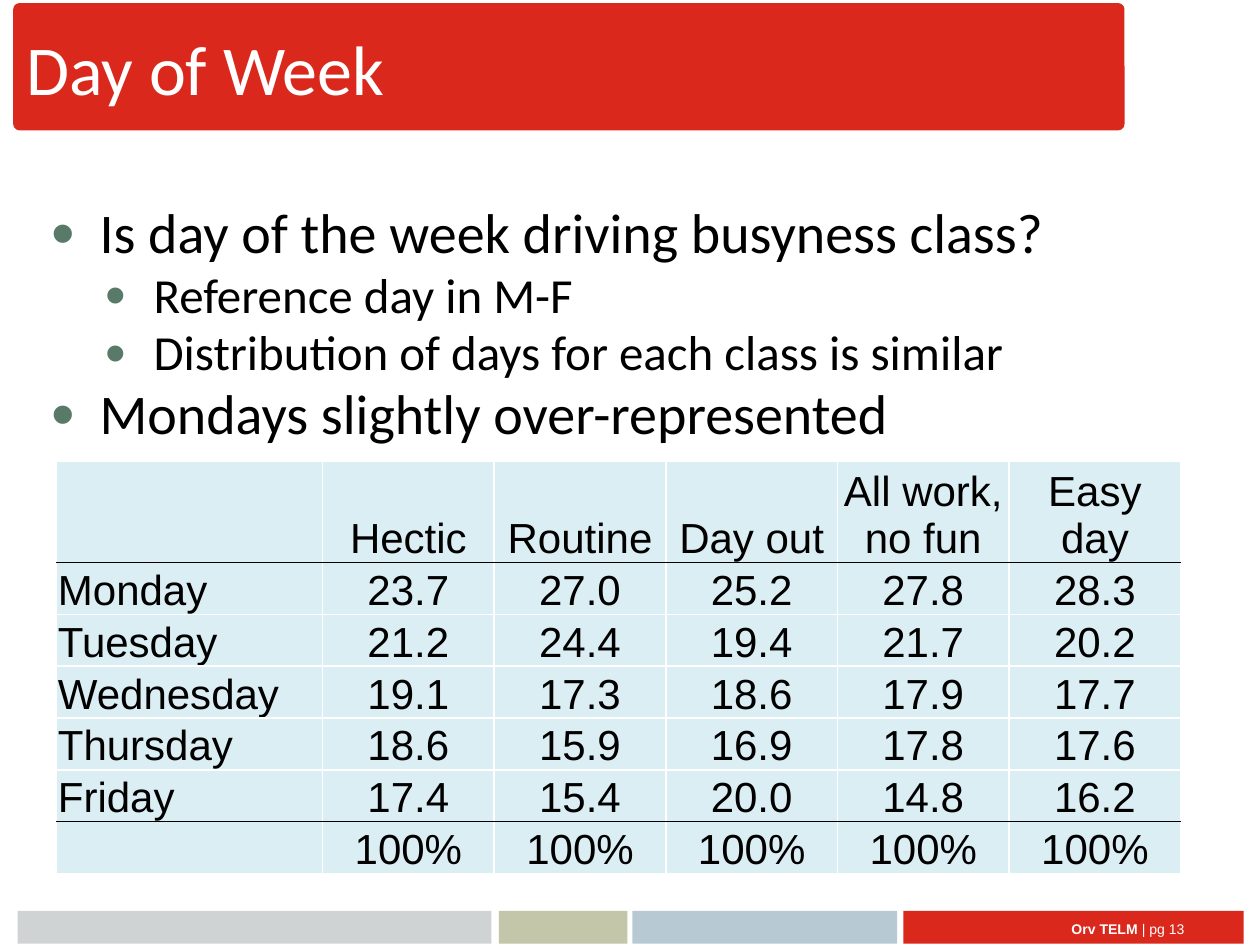
from dataclasses import dataclass

from lxml import etree
from pptx import Presentation
from pptx.dml.color import RGBColor
from pptx.enum.shapes import MSO_SHAPE
from pptx.enum.text import MSO_ANCHOR, MSO_AUTO_SIZE, PP_ALIGN
from pptx.oxml.ns import qn
from pptx.util import Pt

ROUNDED = MSO_SHAPE.ROUNDED_RECTANGLE
MIDDLE, BOTTOM = MSO_ANCHOR.MIDDLE, MSO_ANCHOR.BOTTOM
LEFT, CENTER, RIGHT = PP_ALIGN.LEFT, PP_ALIGN.CENTER, PP_ALIGN.RIGHT
NO_AUTOFIT = MSO_AUTO_SIZE.NONE


@dataclass(frozen=True)
class Theme:
    red: str = "DA291C"
    gray: str = "D0D3D4"
    olive: str = "C3C6A8"
    blue: str = "B7C9D3"
    bullet: str = "597A69"
    cell: str = "DBEEF4"
    black: str = "000000"
    white: str = "FFFFFF"
    heading_font: str = "Calibri"
    data_font: str = "Arial"
    title_size: float = 40
    list_sizes: tuple = (32, 28)
    list_indents: tuple = (27.36, 58.32)
    table_size: float = 24
    footer_size: float = 8


class SlideBuilder:
    def __init__(self, slide, theme):
        self.slide = slide
        self.theme = theme

    def format_runs(self, paragraph, font, size, color):
        for run in paragraph.runs:
            run.font.name = font
            run.font.size = Pt(size)
            run.font.color.rgb = RGBColor.from_string(color)

    def place(self, shape, box):
        shape.left, shape.top, shape.width, shape.height = map(Pt, box)

    def bring_to_front(self, shape):
        self.slide.shapes._spTree.append(shape._element)

    def bar(self, box, color, radius=0, outlined=False):
        shape = self.slide.shapes.add_shape(ROUNDED, *map(Pt, box))
        shape.shadow.inherit = False
        shape.adjustments[0] = radius
        shape.fill.solid()
        shape.fill.fore_color.rgb = RGBColor.from_string(color)
        if outlined:
            shape.line.color.rgb = RGBColor.from_string(color)
            shape.line.width = Pt(0.75)
        else:
            shape.line.fill.background()

    def title(self, text, box):
        shape = self.slide.shapes.title
        self.place(shape, box)
        self.bring_to_front(shape)
        frame = shape.text_frame
        frame.text = text
        frame.vertical_anchor = MIDDLE
        frame.auto_size = NO_AUTOFIT
        paragraph = frame.paragraphs[0]
        paragraph.alignment = LEFT
        self.format_runs(paragraph, self.theme.heading_font, self.theme.title_size, self.theme.white)

    def add_bullet(self, paragraph, indent):
        properties = paragraph._p.get_or_add_pPr()
        properties.set("marL", str(Pt(indent)))
        properties.set("indent", str(-Pt(self.theme.list_indents[0])))
        color = etree.SubElement(properties, qn("a:buClr"))
        etree.SubElement(color, qn("a:srgbClr"), val=self.theme.bullet)
        etree.SubElement(properties, qn("a:buSzPct"), val="120000")
        etree.SubElement(properties, qn("a:buFont"), typeface=self.theme.data_font)
        etree.SubElement(properties, qn("a:buChar"), char="•")

    def bullets(self, items, box, top_inset):
        shape = self.slide.placeholders[1]
        self.place(shape, box)
        self.bring_to_front(shape)
        frame = shape.text_frame
        frame.text = "\n".join(text for level, text in items)
        frame.auto_size = NO_AUTOFIT
        frame.margin_top = Pt(top_inset)
        for paragraph, (level, text) in zip(frame.paragraphs, items):
            paragraph.level = level
            paragraph.space_before = Pt(0)
            paragraph.line_spacing = 0.98
            self.add_bullet(paragraph, self.theme.list_indents[level])
            self.format_runs(paragraph, self.theme.heading_font, self.theme.list_sizes[level], self.theme.black)

    def footer(self, name, page, box):
        shape = self.slide.shapes.add_textbox(*map(Pt, box))
        frame = shape.text_frame
        frame.word_wrap = True
        frame.vertical_anchor = MIDDLE
        paragraph = frame.paragraphs[0]
        paragraph.alignment = RIGHT
        for text, bold in ((name, True), (page, False)):
            run = paragraph.add_run()
            run.text = text
            run.font.bold = bold
        self.format_runs(paragraph, self.theme.data_font, self.theme.footer_size, self.theme.white)

    def cell_borders(self, cell, colors):
        properties = cell._tc.get_or_add_tcPr()
        for side, color in colors.items():
            line = etree.SubElement(properties, qn(f"a:ln{side}"), w=str(Pt(1)))
            fill = etree.SubElement(line, qn("a:solidFill"))
            etree.SubElement(fill, qn("a:srgbClr"), val=color)

    def table(self, rows, left, top, column_widths, row_heights, ruled_rows):
        theme = self.theme
        box = (left, top, sum(column_widths), sum(row_heights))
        table = self.slide.shapes.add_table(len(rows), len(rows[0]), *map(Pt, box)).table
        table.first_row = table.horz_banding = False
        for column, width in zip(table.columns, column_widths):
            column.width = Pt(width)
        for row, height in zip(table.rows, row_heights):
            row.height = Pt(height)
        for row_index, values in enumerate(rows):
            above = theme.black if row_index - 1 in ruled_rows else theme.white
            below = theme.black if row_index in ruled_rows else theme.white
            for column_index, value in enumerate(values):
                cell = table.cell(row_index, column_index)
                self.cell_borders(cell, {"L": theme.white, "R": theme.white, "T": above, "B": below})
                cell.fill.solid()
                cell.fill.fore_color.rgb = RGBColor.from_string(theme.cell)
                cell.margin_left = cell.margin_right = cell.margin_top = Pt(0.72)
                cell.margin_bottom = 0
                cell.vertical_anchor = BOTTOM
                cell.text_frame.text = value
                paragraph = cell.text_frame.paragraphs[0]
                paragraph.alignment = CENTER if column_index else LEFT
                self.format_runs(paragraph, theme.data_font, theme.table_size, theme.black)


def main():
    theme = Theme()
    presentation = Presentation()
    presentation.slide_width, presentation.slide_height = Pt(720), Pt(540)
    slide = presentation.slides.add_slide(presentation.slide_layouts[1])
    builder = SlideBuilder(slide, theme)

    builder.bar((7.92, 2.16, 634.32, 72), theme.red, radius=0.045, outlined=True)
    footer_bars = (
        (10.08, 270.72, theme.gray),
        (285.12, 73.44, theme.olive),
        (361.44, 151.2, theme.blue),
        (516.24, 194.4, theme.red),
    )
    for left, width, color in footer_bars:
        builder.bar((left, 520.56, width, 18.72), color)
    builder.footer("Orv TELM ", "| pg 13", (516.24, 520.56, 167.76, 20.88))

    builder.title("Day of Week", (7.92, 2.16, 645.12, 72.72))
    builder.bullets(
        (
            (0, "Is day of the week driving busyness class?"),
            (1, "Reference day in M-F"),
            (1, "Distribution of days for each class is similar"),
            (0, "Mondays slightly over-represented"),
        ),
        (22.32, 74.88, 663.12, 435.6),
        top_inset=40,
    )
    rows = (
        ("", "Hectic", "Routine", "Day out", "All work, no fun", "Easy day"),
        ("Monday", "23.7", "27.0", "25.2", "27.8", "28.3"),
        ("Tuesday", "21.2", "24.4", "19.4", "21.7", "20.2"),
        ("Wednesday", "19.1", "17.3", "18.6", "17.9", "17.7"),
        ("Thursday", "18.6", "15.9", "16.9", "17.8", "17.6"),
        ("Friday", "17.4", "15.4", "20.0", "14.8", "16.2"),
        ("", *["100%"] * 5),
    )
    builder.table(rows, 32.4, 263.52, [151.92] + [98.1] * 5, [58] + [29.6] * 6, ruled_rows=(0, 5))
    presentation.save("out.pptx")


if __name__ == "__main__":
    main()
